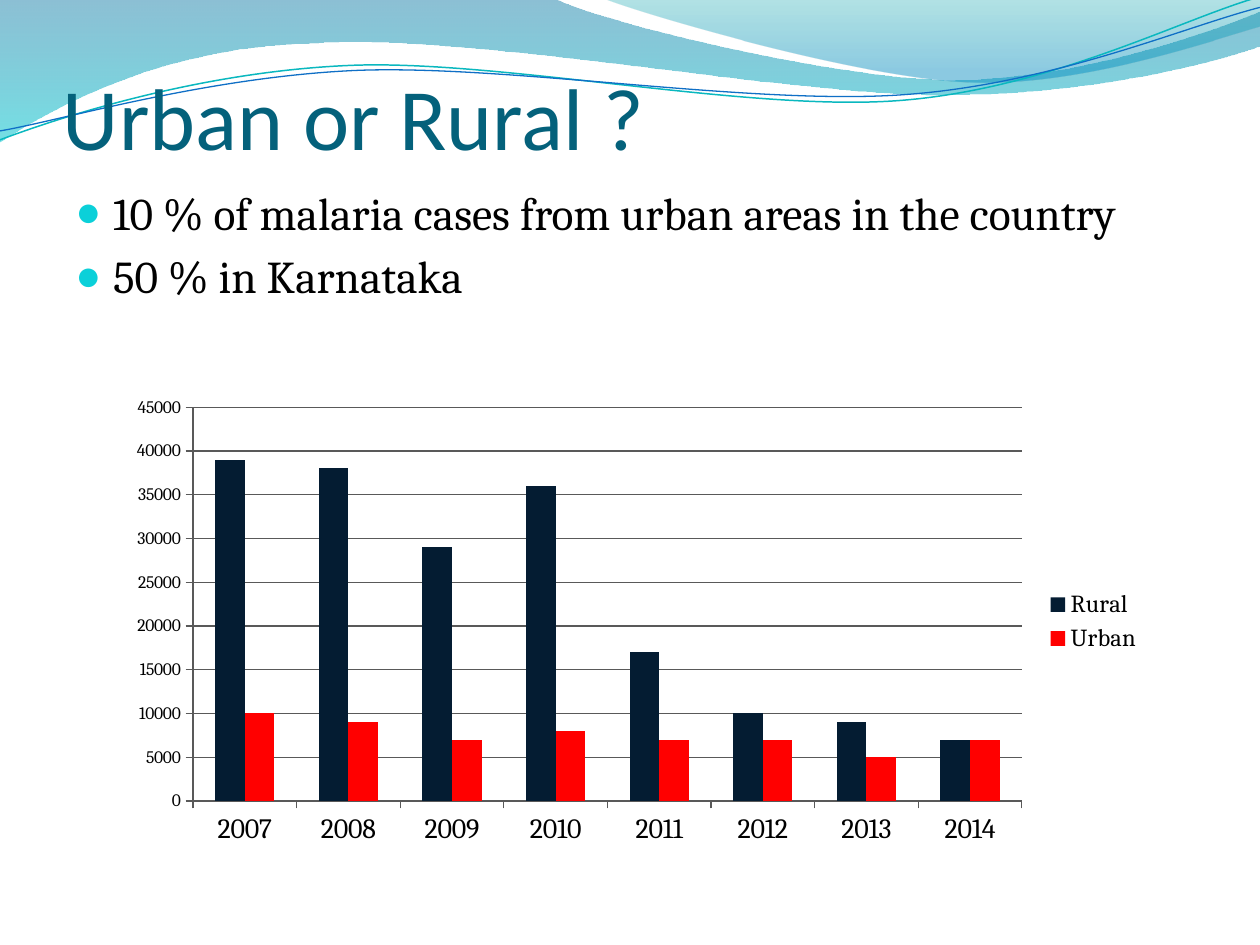
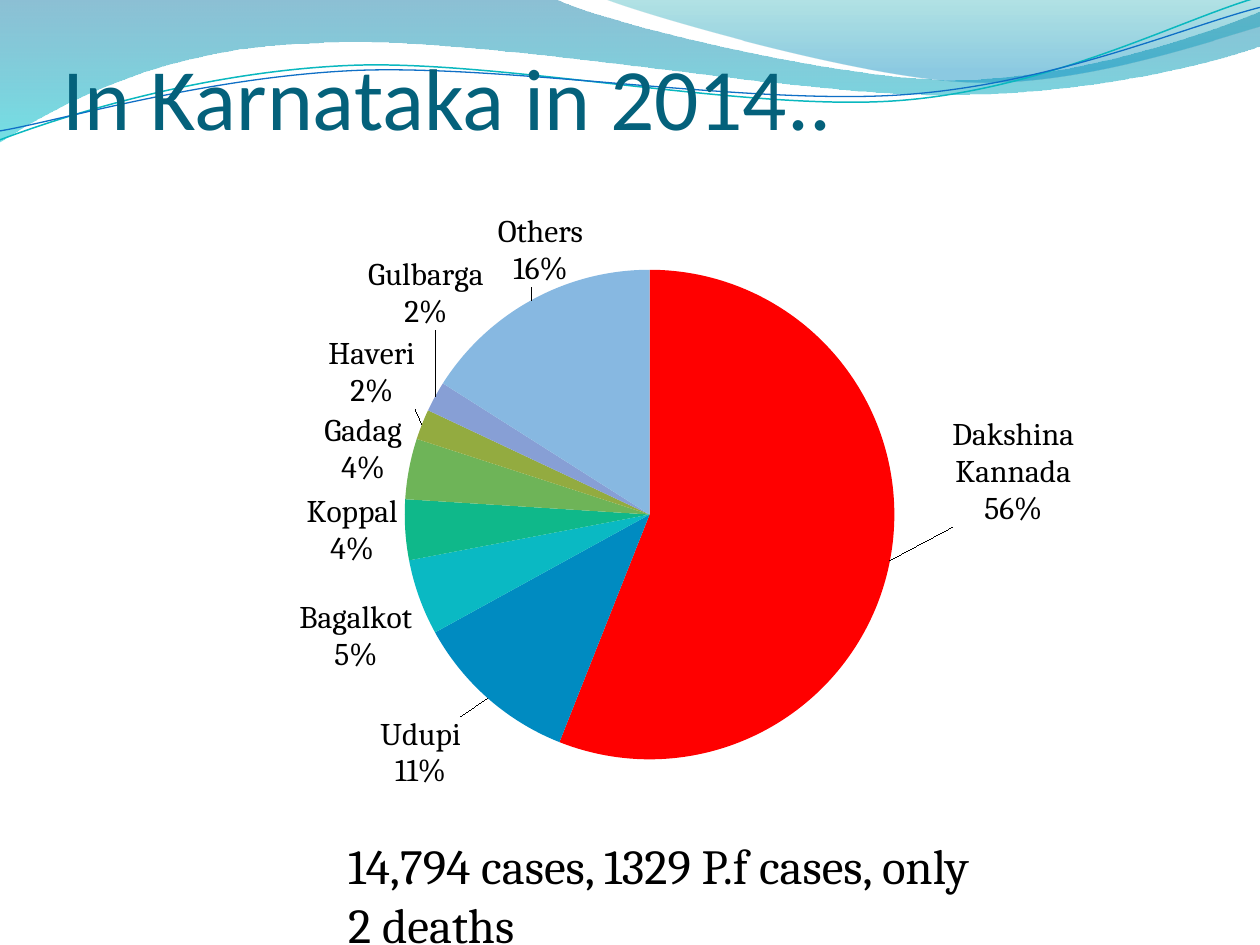
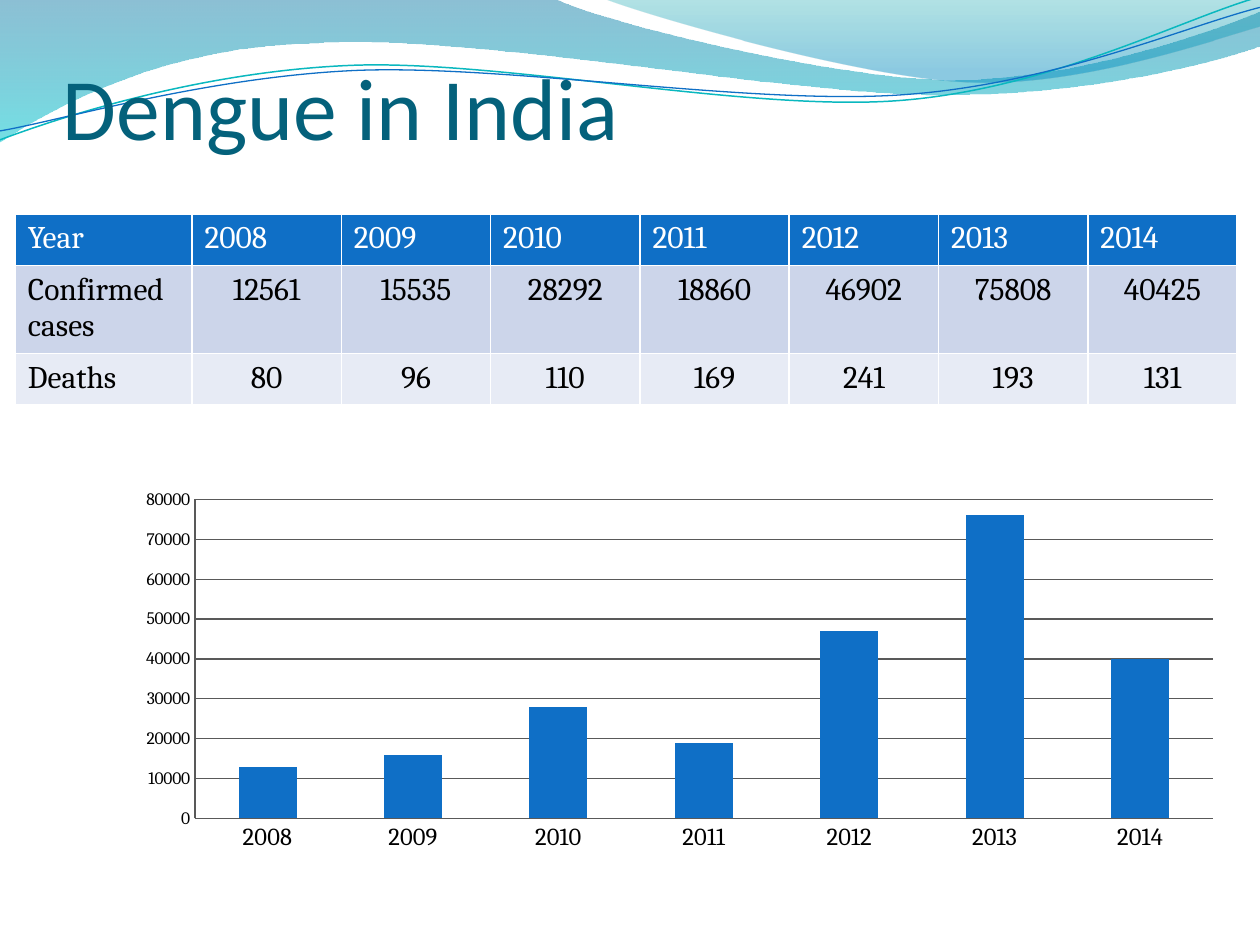
from dataclasses import dataclass

from lxml.etree import SubElement
from pptx import Presentation
from pptx.chart.data import CategoryChartData
from pptx.dml.color import RGBColor
from pptx.enum.chart import (
    XL_CHART_TYPE,
    XL_LABEL_POSITION,
    XL_LEGEND_POSITION,
    XL_TICK_MARK,
)
from pptx.enum.text import MSO_ANCHOR, PP_ALIGN
from pptx.oxml import parse_xml
from pptx.oxml.ns import nsdecls, qn
from pptx.util import Cm, Pt


@dataclass(frozen=True)
class Theme:
    heading_font: str = "Calibri"
    body_font: str = "Cambria"
    title: str = "04617B"
    text: str = "000000"
    white: str = "FFFFFF"
    bullet: str = "0BD0D9"
    blue: str = "0F6FC6"
    teal: str = "0AB8BF"
    navy: str = "041C32"
    red: str = "FF0000"
    grid: str = "595959"
    bands: tuple = ("CCD5EA", "E7EBF5")
    pie: tuple = ("FF0000", "008BC1", "0AB9C3", "0FB88A",
                  "6EB458", "93AB40", "879FD5", "87B8E1")
    title_size: int = 50
    note_size: int = 28
    bullet_size: int = 26
    label_size: int = 18
    category_size: int = 16
    small_category_size: int = 14
    legend_size: int = 14
    axis_size: int = 10


THEME = Theme()

# Wave outlines in centimetres: a start point, then lines of one point
# and Bezier curves of three points.
BAND_WAVE = [
    (0, 0),
    [(11.18, -0.03)],
    [(12.09, 0.43), (16.87, 1.6), (19.25, 1.6)],
    [(21.67, 1.6), (24.33, 0.66), (25.4, 0.23)],
    [(25.43, 0.91)],
    [(24.97, 1.12), (22.1, 1.93), (18.95, 1.91)],
    [(15.8, 1.91), (9.7, 0.71), (6.53, 0.86)],
    [(3.28, 0.91), (1.17, 2.11), (-0.03, 2.87)],
]
CREST_WAVE = [
    (12.17, -0.03),
    [(12.93, 0.28), (17.32, 1.57), (19.53, 1.65)],
    [(21.74, 1.75), (24.41, 0.81), (25.4, 0.53)],
    [(25.4, 0)],
]
TEAL_WAVE = [
    (0, 2.82),
    [(1.22, 2.36), (4.01, 1.45), (7.04, 1.32)],
    [(10.03, 1.19), (15.06, 2.26), (18.11, 2.03)],
    [(21.16, 1.8), (23.83, 0.38), (25.35, -0.05)],
]
BLUE_WAVE = [
    (0, 2.64),
    [(1.19, 2.44), (4.17, 1.55), (7.19, 1.42)],
    [(10.24, 1.3), (15.16, 2.13), (18.21, 1.91)],
    [(21.23, 1.7), (23.9, 0.53), (25.4, 0.15)],
]
# Gradient stops: position, colour and opacity in percent.
BAND_STOPS = [(0, "0074A1", 45), (100, "00C6CF", 55)]
CREST_STOPS = [(0, "00A1A9", 30), (80, "008BBF", 45)]

DENGUE_YEARS = ["2008", "2009", "2010", "2011", "2012", "2013", "2014"]
DENGUE_CASES = [12561, 15535, 28292, 18860, 46902, 75808, 40425]
DENGUE_DEATHS = [80, 96, 110, 169, 241, 193, 131]


def rgb(color):
    return RGBColor.from_string(color)


def style_font(font, size, color=THEME.text, name=THEME.body_font):
    font.size = Pt(size)
    font.name = name
    font.color.rgb = rgb(color)


def add_wave(slide, outline, close):
    """Draw the outline through all its points, then bend each triple into a curve."""
    start, *segments = outline
    builder = slide.shapes.build_freeform(Cm(start[0]), Cm(start[1]))
    builder.add_line_segments(
        [(Cm(x), Cm(y)) for segment in segments for x, y in segment], close=close)
    shape = builder.convert_to_shape()
    shape.shadow.inherit = False
    lines = iter(list(shape._element.iter(qn("a:lnTo"))))
    for segment in segments:
        first, *others = [next(lines) for _ in segment]
        if others:
            first.tag = qn("a:cubicBezTo")
        for line in others:
            line.getparent().remove(line)
            first.append(line[0])
    return shape


def add_filled_wave(slide, outline, stops):
    shape = add_wave(slide, outline, close=True)
    shape.line.fill.background()
    stop_xml = "".join(
        f'<a:gs pos="{position * 1000}"><a:srgbClr val="{color}">'
        f'<a:alpha val="{opacity * 1000}"/></a:srgbClr></a:gs>'
        for position, color, opacity in stops)
    gradient = parse_xml(
        f'<a:gradFill {nsdecls("a")}><a:gsLst>{stop_xml}</a:gsLst>'
        '<a:lin ang="5400000" scaled="0"/></a:gradFill>')
    shape._element.spPr.find(qn("a:custGeom")).addnext(gradient)
    return shape


def add_line_wave(slide, outline, color, width):
    shape = add_wave(slide, outline, close=False)
    shape.fill.background()
    shape.line.color.rgb = rgb(color)
    shape.line.width = Pt(width)
    return shape


def move_waves_to_layout(slide):
    """Build the waves on a slide, then hand them to its layout for all slides."""
    waves = [
        add_filled_wave(slide, BAND_WAVE, BAND_STOPS),
        add_filled_wave(slide, CREST_WAVE, CREST_STOPS),
        add_line_wave(slide, TEAL_WAVE, THEME.teal, 0.85),
        add_line_wave(slide, BLUE_WAVE, THEME.blue, 0.75),
    ]
    layout_tree = slide.slide_layout.shapes._spTree
    for placeholder in list(slide.slide_layout.placeholders):
        layout_tree.remove(placeholder._element)
    for wave in waves:
        layout_tree.append(wave._element)


def add_text(slide, box, lines, size, color=THEME.text, name=THEME.body_font):
    frame = slide.shapes.add_textbox(*box).text_frame
    frame.word_wrap = True
    frame.text = "\n".join(lines)
    for paragraph in frame.paragraphs:
        for run in paragraph.runs:
            style_font(run.font, size, color, name)
    return frame


def add_titled_slide(presentation, title, title_top):
    slide = presentation.slides.add_slide(presentation.slide_layouts[6])
    box = (Cm(1.27), title_top, Cm(22.86), Cm(3.18))
    frame = add_text(slide, box, [title], THEME.title_size, THEME.title, THEME.heading_font)
    frame.vertical_anchor = MSO_ANCHOR.BOTTOM
    frame.margin_left = frame.margin_right = frame.margin_bottom = 0
    return slide


def add_bullets(slide, box, lines):
    frame = add_text(slide, box, lines, THEME.bullet_size)
    for index, paragraph in enumerate(frame.paragraphs):
        properties = paragraph._p.get_or_add_pPr()
        properties.set("marL", str(Cm(0.76)))
        properties.set("indent", str(-Cm(0.76)))
        color = SubElement(properties, qn("a:buClr"))
        SubElement(color, qn("a:srgbClr"), val=THEME.bullet)
        SubElement(properties, qn("a:buSzPct"), val="95000")
        SubElement(properties, qn("a:buFont"), typeface="Arial")
        SubElement(properties, qn("a:buChar"), char="●")
        if index:
            paragraph.space_before = Pt(0.2 * THEME.bullet_size)


def manual_layout(content, **fractions):
    content += "".join(f'<c:{key} val="{value:.4f}"/>' for key, value in fractions.items())
    return parse_xml(f'<c:layout {nsdecls("c")}><c:manualLayout>{content}'
                     '</c:manualLayout></c:layout>')


def place_plot(chart, box, plot_box):
    """Place the inner plot area, given on the slide like the chart's own box."""
    left, top, width, height = box
    layout = manual_layout(
        '<c:layoutTarget val="inner"/><c:xMode val="edge"/><c:yMode val="edge"/>',
        x=(plot_box[0] - left) / width, y=(plot_box[1] - top) / height,
        w=plot_box[2] / width, h=plot_box[3] / height)
    plot_area = chart._chartSpace.chart.plotArea
    for default_layout in plot_area.findall(qn("c:layout")):
        plot_area.remove(default_layout)
    plot_area.insert(0, layout)


def add_chart(slide, box, kind, categories, series, plot_box):
    data = CategoryChartData()
    data.categories = categories
    for name, values in series.items():
        data.add_series(name, values)
    chart = slide.shapes.add_chart(kind, *box, data).chart
    style_font(chart.font, THEME.axis_size)
    chart.has_title = False
    chart.has_legend = False
    place_plot(chart, box, plot_box)
    return chart


def style_line(line):
    line.color.rgb = rgb(THEME.grid)
    line.width = Pt(0.75)


def add_column_chart(slide, box, categories, series, colors, plot_box,
                     scale, tick_mark, category_size):
    chart = add_chart(slide, box, XL_CHART_TYPE.COLUMN_CLUSTERED,
                      categories, series, plot_box)
    plot = chart.plots[0]
    plot.gap_width = 150
    plot.overlap = 0
    plot.vary_by_categories = False
    for bars, color in zip(plot.series, colors):
        bars.format.fill.solid()
        bars.format.fill.fore_color.rgb = rgb(color)
    value_axis, category_axis = chart.value_axis, chart.category_axis
    value_axis.minimum_scale = 0
    value_axis.maximum_scale, value_axis.major_unit = scale
    value_axis.has_major_gridlines = True
    style_line(value_axis.major_gridlines.format.line)
    for axis, size in ((value_axis, THEME.axis_size), (category_axis, category_size)):
        axis.major_tick_mark = tick_mark
        axis.minor_tick_mark = XL_TICK_MARK.NONE
        style_line(axis.format.line)
        style_font(axis.tick_labels.font, size)
    return chart


def add_legend(chart):
    chart.has_legend = True
    chart.legend.position = XL_LEGEND_POSITION.RIGHT
    chart.legend.include_in_layout = False
    style_font(chart.legend.font, THEME.legend_size)


def show_name_and_percent(labels):
    """Switch one label element to category name over percentage."""
    for tag, value in (("showVal", "0"), ("showCatName", "1"), ("showPercent", "1")):
        labels.find(qn(f"c:{tag}")).set("val", value)
    separator = parse_xml(f'<c:separator {nsdecls("c")}>\n</c:separator>')
    anchor = labels.find(qn("c:showBubbleSize"))
    if anchor is None:
        anchor = labels.find(qn("c:showPercent"))
    anchor.addnext(separator)


def add_pie_chart(slide, box, shares, label_offsets, plot_box):
    chart = add_chart(slide, box, XL_CHART_TYPE.PIE, list(shares),
                      {"Series 1": list(shares.values())}, plot_box)
    chart.plots[0].vary_by_categories = True
    pie = chart.plots[0].series[0]
    for index, color in enumerate(THEME.pie):
        fill = pie.points[index].format.fill
        fill.solid()
        fill.fore_color.rgb = rgb(color)
    labels = pie.data_labels
    labels.position = XL_LABEL_POSITION.OUTSIDE_END
    style_font(labels.font, THEME.label_size)
    names = list(shares)
    for name in label_offsets:
        label = pie.points[names.index(name)].data_label
        label.position = XL_LABEL_POSITION.OUTSIDE_END
        style_font(label.font, THEME.label_size)
    group = pie._element.find(qn("c:dLbls"))
    show_name_and_percent(group)
    for label in group.findall(qn("c:dLbl")):
        show_name_and_percent(label)
        index = label.find(qn("c:idx"))
        x, y = label_offsets[names[int(index.get("val"))]]
        index.addnext(manual_layout("", x=x, y=y))


def add_cell_borders(cell):
    properties = cell._tc.get_or_add_tcPr()
    for side in "LRTB":
        line = SubElement(properties, qn(f"a:ln{side}"), w=str(Pt(1)))
        SubElement(SubElement(line, qn("a:solidFill")), qn("a:srgbClr"), val=THEME.white)


def add_table(slide, left, top, column_widths, row_heights, rows):
    table = slide.shapes.add_table(len(rows), len(column_widths), left, top,
                                   sum(column_widths), sum(row_heights)).table
    for column, width in zip(table.columns, column_widths):
        column.width = width
    for row, height in zip(table.rows, row_heights):
        row.height = height
    for row_index, values in enumerate(rows):
        header = row_index == 0
        for column_index, value in enumerate(values):
            cell = table.cell(row_index, column_index)
            add_cell_borders(cell)
            cell.fill.solid()
            cell.fill.fore_color.rgb = rgb(THEME.blue if header else THEME.bands[row_index - 1])
            cell.text = str(value)
            paragraph = cell.text_frame.paragraphs[0]
            if not header and column_index:
                paragraph.alignment = PP_ALIGN.CENTER
            run = paragraph.runs[0]
            style_font(run.font, THEME.label_size, THEME.white if header else THEME.text)
            run.font.bold = False


def add_urban_rural_slide(presentation):
    slide = add_titled_slide(presentation, "Urban or Rural ?", Cm(0.2))
    move_waves_to_layout(slide)
    add_bullets(slide, (Cm(1.27), Cm(3.6), Cm(22.86), Cm(12.2)), [
        "10 % of malaria cases from urban areas in the country",
        "50 % in Karnataka",
    ])
    chart = add_column_chart(
        slide, (Cm(2.33), Cm(7.83), Cm(20.95), Cm(9.4)),
        [str(year) for year in range(2007, 2015)],
        {"Rural": [39000, 38000, 29000, 36000, 17000, 10000, 9000, 7000],
         "Urban": [10000, 9000, 7000, 8000, 7000, 7000, 5000, 7000]},
        (THEME.navy, THEME.red), (Cm(3.89), Cm(8.21), Cm(16.71), Cm(7.94)),
        (45000, 5000), XL_TICK_MARK.OUTSIDE, THEME.category_size)
    add_legend(chart)


def add_karnataka_slide(presentation):
    slide = add_titled_slide(presentation, "In Karnataka in 2014..", Cm(-0.2))
    shares = {"Dakshina Kannada": 56, "Udupi": 11, "Bagalkot": 5, "Koppal": 4,
              "Gadag": 4, "Haveri": 2, "Gulbarga": 2, "Others": 16}
    label_offsets = {"Dakshina Kannada": (0.05, -0.23), "Udupi": (-0.02, 0.02),
                     "Gadag": (0, 0.03), "Haveri": (0, -0.02),
                     "Gulbarga": (0.05, -0.1), "Others": (0.05, -0.01)}
    add_pie_chart(slide, (Cm(2.12), Cm(3.81), Cm(22.23), Cm(12.7)),
                  shares, label_offsets, (Cm(8.16), Cm(5.44), Cm(9.87), Cm(9.87)))
    add_text(slide, (Cm(6.77), Cm(16.72), Cm(13.33), Cm(2.64)),
             ["14,794 cases, 1329 P.f cases, only 2 deaths"], THEME.note_size)


def add_dengue_slide(presentation):
    slide = add_titled_slide(presentation, "Dengue in India", Cm(0))
    add_table(slide, Cm(0.31), Cm(4.32),
              [Cm(3.56)] + [Cm(3.01)] * len(DENGUE_YEARS),
              [Cm(1.03), Cm(1.78), Cm(1.03)],
              [["Year", *DENGUE_YEARS],
               ["Confirmed cases", *DENGUE_CASES],
               ["Deaths", *DENGUE_DEATHS]])
    add_column_chart(slide, (Cm(2.49), Cm(9.73), Cm(22.4), Cm(7.62)), DENGUE_YEARS,
                     {"Series 1": [round(cases, -3) for cases in DENGUE_CASES]},
                     (THEME.blue,), (Cm(3.93), Cm(10.07), Cm(20.52), Cm(6.43)),
                     (80000, 10000), XL_TICK_MARK.NONE, THEME.small_category_size)


def main():
    presentation = Presentation()
    presentation.slide_width = Cm(25.4)
    presentation.slide_height = Cm(19.05)
    add_urban_rural_slide(presentation)
    add_karnataka_slide(presentation)
    add_dengue_slide(presentation)
    presentation.save("out.pptx")


if __name__ == "__main__":
    main()
